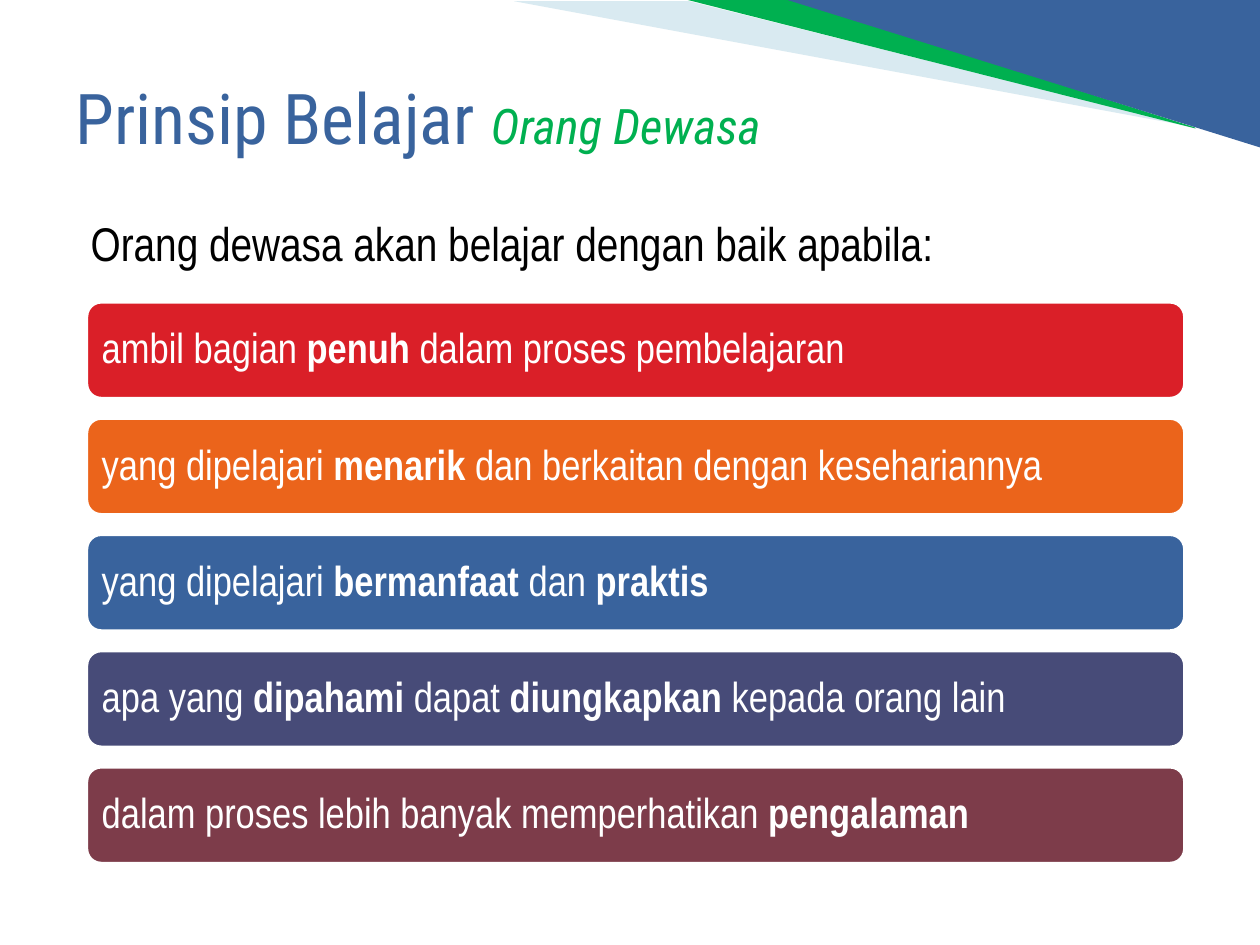
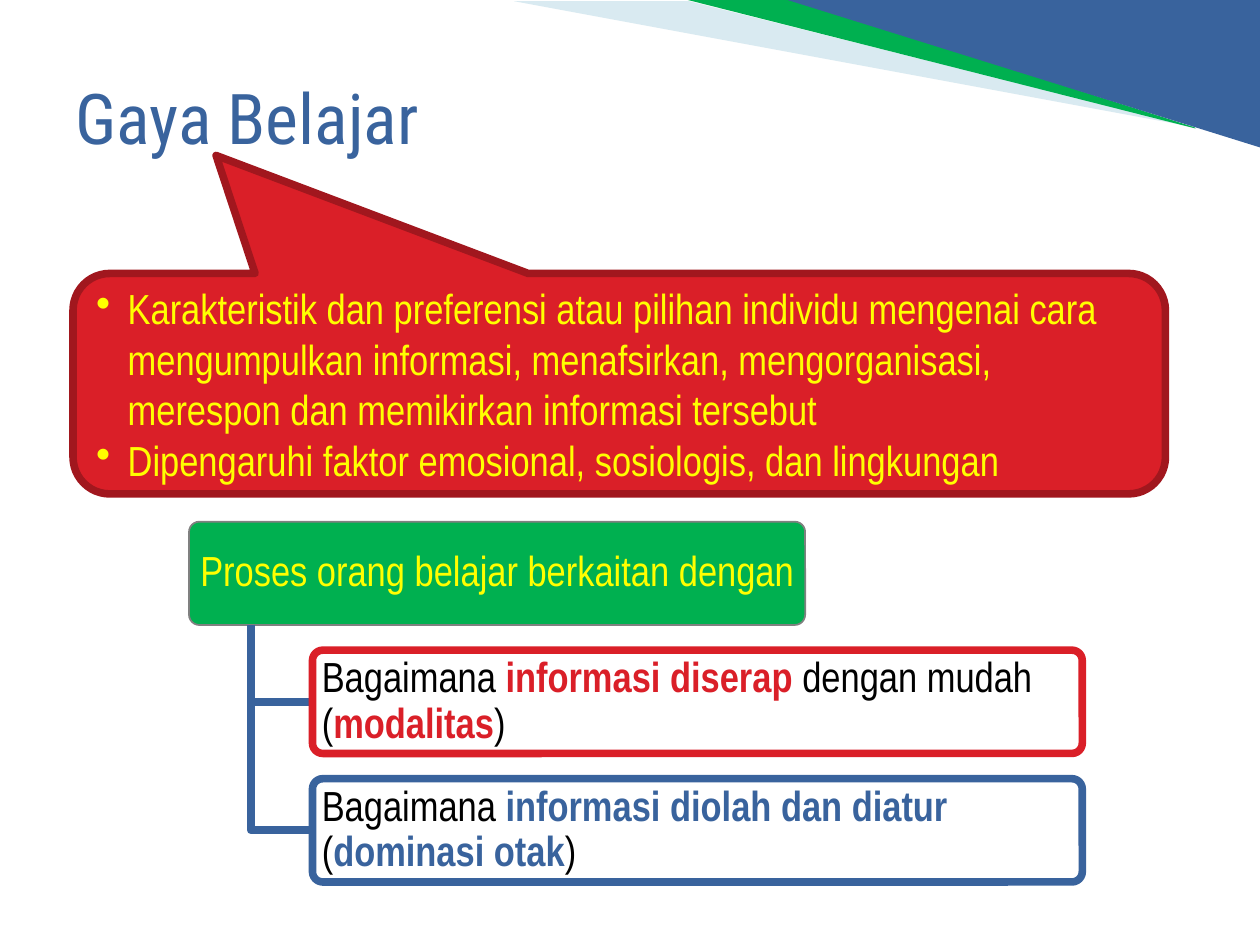
from pptx import Presentation
from pptx.dml.color import RGBColor
from pptx.enum.shapes import MSO_SHAPE
from pptx.enum.text import MSO_ANCHOR, PP_ALIGN
from pptx.oxml.ns import qn
from pptx.oxml.xmlchemy import OxmlElement
from pptx.util import Inches, Pt

ROUNDED = MSO_SHAPE.ROUNDED_RECTANGLE
CALLOUT = MSO_SHAPE.ROUNDED_RECTANGULAR_CALLOUT
TRIANGLE = MSO_SHAPE.RIGHT_TRIANGLE
TOP, MIDDLE = MSO_ANCHOR.TOP, MSO_ANCHOR.MIDDLE
LEFT, CENTER = PP_ALIGN.LEFT, PP_ALIGN.CENTER


class Theme:
    blue = RGBColor.from_string("39639D")
    green = RGBColor.from_string("00B050")
    pale_blue = RGBColor.from_string("A0CBDC")
    red = RGBColor.from_string("DA1F28")
    dark_red = RGBColor.from_string("A1171E")
    orange = RGBColor.from_string("EB641B")
    indigo = RGBColor.from_string("474B78")
    wine = RGBColor.from_string("7D3C4A")
    yellow = RGBColor.from_string("FFFF00")
    gray = RGBColor.from_string("808080")
    white = RGBColor.from_string("FFFFFF")
    black = RGBColor.from_string("000000")
    title = {"name": "Roboto Condensed", "size": Pt(40), "color": blue}
    subtitle = {"size": Pt(28), "color": green, "italic": True}
    intro = {"name": "Arial Narrow", "size": Pt(27), "color": black}
    body = {"name": "Arial Narrow", "size": Pt(24)}
    heavy_line = Pt(4.33)


def write_text(shape, lines, font, emphasis=None, anchor=MIDDLE, margins=(0.1, 0.05),
               align=LEFT, spacing=None, bullet_indent=None):
    """Fill a shape with lines; text between asterisks takes the emphasis format."""
    frame = shape.text_frame
    side, end = (Inches(margin) for margin in margins)
    frame_format = {"word_wrap": True, "vertical_anchor": anchor, "margin_left": side,
                    "margin_right": side, "margin_top": end, "margin_bottom": end}
    for name, value in frame_format.items():
        setattr(frame, name, value)
    for index, line in enumerate(lines):
        paragraph = frame.add_paragraph() if index else frame.paragraphs[0]
        if bullet_indent:
            properties = paragraph._p.get_or_add_pPr()
            properties.set("marL", str(Inches(bullet_indent)))
            properties.set("indent", str(-Inches(bullet_indent)))
            bullet = OxmlElement("a:buChar")
            bullet.set("char", "•")
            properties.append(bullet)
        paragraph.alignment = align
        paragraph.line_spacing = spacing
        for position, piece in enumerate(line.split("*")):
            if not piece:
                continue
            run = paragraph.add_run()
            run.text = piece
            run_format = {**font, **emphasis} if position % 2 else font
            for name, value in run_format.items():
                if name == "color":
                    run.font.color.rgb = value
                else:
                    setattr(run.font, name, value)


def draw_shape(slide, kind, box, fill=None, line=None, width=None, adjustments=()):
    """Add a preset shape in a box, or an outline through points when kind is None."""
    if kind is None:
        points = [(Inches(x), Inches(y)) for x, y in box]
        builder = slide.shapes.build_freeform(*points[0])
        builder.add_line_segments(points[1:], close=fill is not None)
        shape = builder.convert_to_shape()
    else:
        shape = slide.shapes.add_shape(kind, *map(Inches, box))
    shape.shadow.inherit = False
    for index, value in enumerate(adjustments):
        shape.adjustments[index] = value
    if fill is None:
        shape.fill.background()
    else:
        shape.fill.solid()
        shape.fill.fore_color.rgb = fill
    if line is None:
        shape.line.fill.background()
    else:
        shape.line.color.rgb = line
        shape.line.width = width
    return shape


presentation = Presentation()
presentation.slide_width = Inches(10)
presentation.slide_height = Inches(7.5)
blank_layout = presentation.slide_layouts[6]

# Corner stripes and title on every slide
slides = []
for title in ("Prinsip Belajar *Orang Dewasa*", "Gaya Belajar"):
    slide = presentation.slides.add_slide(blank_layout)
    slides.append(slide)
    pale_stripe = draw_shape(slide, None, [(9.48, 1.01), (4.08, 0.01), (5.47, 0.01)],
                             Theme.pale_blue)
    alpha = OxmlElement("a:alpha")
    alpha.set("val", "40000")
    pale_stripe._element.spPr.find(".//" + qn("a:srgbClr")).append(alpha)
    draw_shape(slide, None, [(9.49, 1.02), (5.46, 0), (6.31, 0), (9.48, 1.01)], Theme.green)
    corner = draw_shape(slide, TRIANGLE, (6.25, 0, 3.75, 1.17), Theme.blue)
    corner.rotation = 180
    title_box = slide.shapes.add_textbox(*map(Inches, (0.5, 0.3, 9, 1.25)))
    write_text(title_box, [title], Theme.title, Theme.subtitle)

principles_slide, styles_slide = slides

# Slide 1: introduction and principle bars
intro_box = principles_slide.shapes.add_textbox(*map(Inches, (0.5, 1.65, 9, 0.65)))
write_text(intro_box, ["Orang dewasa akan belajar dengan baik apabila:"], Theme.intro,
           anchor=TOP, margins=(0.22, 0.05))

principles = [
    ("ambil bagian *penuh* dalam proses pembelajaran", Theme.red),
    ("yang dipelajari *menarik* dan berkaitan dengan kesehariannya", Theme.orange),
    ("yang dipelajari *bermanfaat* dan *praktis*", Theme.blue),
    ("apa yang *dipahami* dapat *diungkapkan* kepada orang lain", Theme.indigo),
    ("dalam proses lebih banyak memperhatikan *pengalaman*", Theme.wine),
]
bar_top, bar_step = 2.38, 0.9225
for row, (text, color) in enumerate(principles):
    bar = draw_shape(principles_slide, ROUNDED, (0.67, bar_top + row * bar_step, 8.75, 0.8),
                     color, Theme.white, Theme.heavy_line)
    write_text(bar, [text], {**Theme.body, "color": Theme.white}, {"bold": True},
               margins=(0.1, 0.1), spacing=0.9)

# Slide 2: definition callout
callout = draw_shape(styles_slide, CALLOUT, (0.58, 2.17, 8.67, 1.75), Theme.red,
                     Theme.dark_red, Theme.heavy_line, (-0.369, -1.035, 0.167))
write_text(callout, [
    "Karakteristik dan preferensi atau pilihan individu mengenai cara mengumpulkan informasi, "
    "menafsirkan, mengorganisasi, merespon dan memikirkan informasi tersebut",
    "Dipengaruhi faktor emosional, sosiologis, dan lingkungan",
], {**Theme.body, "color": Theme.yellow}, bullet_indent=0.25)

# Slide 2: learning process and its two branches
node_height, corner_ratio = 0.82, 0.1
node_text = {"margins": (0.05, 0.03), "spacing": 0.9}
process_top, branch_step = 4.14, 1.02
process = draw_shape(styles_slide, ROUNDED, (1.5, process_top, 4.89, node_height),
                     Theme.green, Theme.gray, Pt(1), [corner_ratio])
write_text(process, ["Proses orang belajar berkaitan dengan"],
           {**Theme.body, "color": Theme.yellow}, align=CENTER, **node_text)

trunk_x, branch_x = 1.99, 2.48
branches = [
    ("Bagaimana *informasi diserap *dengan mudah (*modalitas*)", Theme.red),
    ("Bagaimana *informasi diolah dan diatur *(*dominasi otak*)", Theme.blue),
]
for row, (text, color) in enumerate(branches, start=1):
    branch_top = process_top + row * branch_step
    branch_middle = branch_top + node_height / 2
    draw_shape(styles_slide, None,
               [(trunk_x, process_top + node_height), (trunk_x, branch_middle),
                (branch_x, branch_middle)],
               line=Theme.blue, width=Theme.heavy_line)
    branch = draw_shape(styles_slide, ROUNDED, (branch_x, branch_top, 6.11, node_height),
                        Theme.white, color, Theme.heavy_line, [corner_ratio])
    write_text(branch, [text], {**Theme.body, "color": Theme.black},
               {"color": color, "bold": True}, **node_text)

presentation.save("out.pptx")
